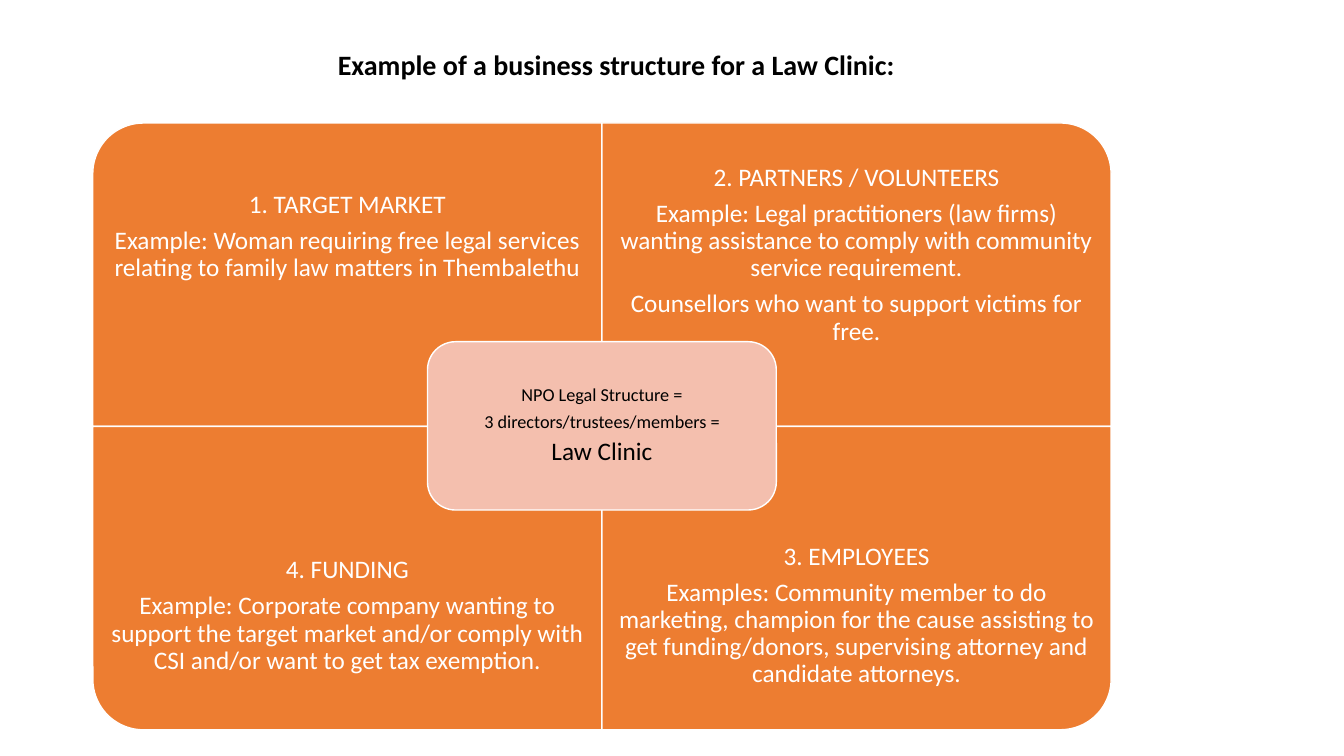
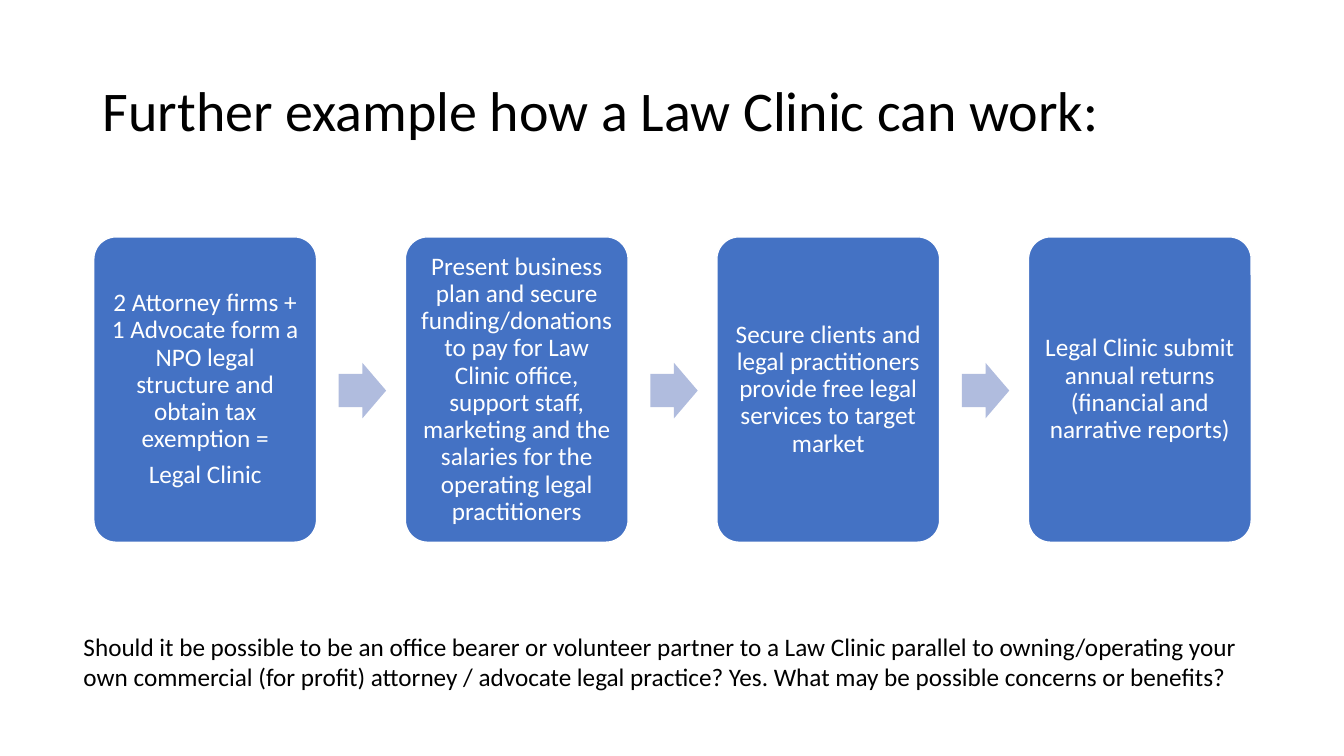
from pptx import Presentation
from pptx import util as u
from pptx.dml.color import RGBColor
from pptx.enum import shapes, text

PX = 9144
FONT = "Calibri"
INK = {"black": "000000", "white": "FFFFFF", "orange": "ED7D31",
       "pink": "F4BFAE", "blue": "4472C4", "pale": "B0BCDE"}
KIND = shapes.MSO_SHAPE
ALIGN = text.PP_ALIGN
ANCHOR = text.MSO_ANCHOR

QUADS = [
    (0, 0, 270, 0, ["1. TARGET MARKET",
                    "Example: Woman requiring free legal services relating to "
                    "family law matters in Thembalethu"]),
    (1, 0, 0, 18, ["2. PARTNERS / VOLUNTEERS",
                   "Example: Legal practitioners (law firms) wanting assistance "
                   "to comply with community service requirement.",
                   "Counsellors who want to support victims for free."]),
    (0, 1, 180, 0, ["4. FUNDING",
                    "Example: Corporate company wanting to support the target "
                    "market and/or comply with CSI and/or want to get tax "
                    "exemption."]),
    (1, 1, 90, 0, ["3. EMPLOYEES",
                   "Examples: Community member to do marketing, champion for "
                   "the cause assisting to get funding/donors, supervising "
                   "attorney and candidate attorneys."]),
]
CORE = ["NPO Legal Structure =", "3 directors/trustees/members =", "Law Clinic"]
STEPS = [
    ["2 Attorney firms + 1 Advocate form a NPO legal structure and obtain tax "
     "exemption =", "Legal Clinic"],
    ["Present business plan and secure funding/donations to pay for Law Clinic "
     "office, support staff, marketing and the salaries for the operating "
     "legal practitioners"],
    ["Secure clients and legal practitioners provide free legal services to "
     "target market"],
    ["Legal Clinic submit annual returns (financial and narrative reports)"],
]
NOTE = ("Should it be possible to be an office bearer or volunteer partner to a "
        "Law Clinic parallel to owning/operating your own commercial (for "
        "profit) attorney / advocate legal practice? Yes. What may be possible "
        "concerns or benefits?")


def tint(name):
    return RGBColor.from_string(INK[name])


def place(x, y, w, h):
    return [u.Emu(n * PX) for n in (x, y, w, h)]


def write(shape, lines, sizes=(18,), ink="white", bold=False, align=ALIGN.CENTER,
          anchor=ANCHOR.MIDDLE, lead=0.9, after=0.35, inset=None):
    frame = shape.text_frame
    frame.word_wrap = True
    frame.auto_size = text.MSO_AUTO_SIZE.NONE
    frame.vertical_anchor = anchor
    if inset is not None:
        pad = u.Emu(inset * PX)
        frame.margin_left = frame.margin_right = pad
        frame.margin_top = frame.margin_bottom = pad
    for i, line in enumerate(lines):
        para = frame.paragraphs[0] if i == 0 else frame.add_paragraph()
        size = sizes[min(i, len(sizes) - 1)]
        para.alignment = align
        para.line_spacing = lead
        para.space_before = u.Pt(0)
        para.space_after = u.Pt(round(size * after, 2))
        run = para.add_run()
        run.text = line
        font = run.font
        font.name, font.size, font.bold = FONT, u.Pt(size), bold
        font.color.rgb = tint(ink)


def head(slide, line, box, size, bold=False):
    title = slide.shapes.title
    title.left, title.top, title.width, title.height = place(*box)
    write(title, [line], sizes=(size,), ink="black", bold=bold,
          align=ALIGN.LEFT, after=0)


def label(slide, lines, box, **style):
    write(slide.shapes.add_textbox(*place(*box)), lines, **style)


def block(slide, kind, box, fill, edge=True, turn=0, adjust=()):
    shape = slide.shapes.add_shape(kind, *place(*box))
    shape.shadow.inherit = False
    shape.rotation = turn
    shape.fill.solid()
    shape.fill.fore_color.rgb = tint(fill)
    if edge:
        shape.line.color.rgb = tint("white")
        shape.line.width = u.Pt(1)
    else:
        shape.line.fill.background()
    for i, value in enumerate(adjust):
        shape.adjustments[i] = value
    return shape


def quad(slide, col, row, turn, drop, lines):
    wide, high, deep = 505, 301, 226
    x, y = 92 + col * wide, 122 + row * high
    w, h = (high, wide) if turn % 180 else (wide, high)
    box = (x + (wide - w) // 2, y + (high - h) // 2, w, h)
    block(slide, KIND.ROUND_1_RECTANGLE, box, "orange", turn=turn)
    top = y + row * (high - deep) + drop
    label(slide, lines, (x, top, wide, deep), inset=14)


def matrix(slide):
    head(slide, "Example of a business structure for a Law Clinic:",
         (325, 28, 624, 76), 20, bold=True)
    for item in QUADS:
        quad(slide, *item)
    core = block(slide, KIND.ROUNDED_RECTANGLE, (424, 339, 346, 167), "pink")
    write(core, CORE, sizes=(13, 13, 18), ink="black", inset=5)


def process(slide):
    head(slide, "Further example how a Law Clinic can work:",
         (92, 40, 1150, 145), 40)
    pitch = 309
    for i, lines in enumerate(STEPS):
        x = 93 + i * pitch
        card = block(slide, KIND.ROUNDED_RECTANGLE, (x, 235, 221, 303), "blue",
                     adjust=(0.1,))
        write(card, lines, inset=7)
        if i < len(STEPS) - 1:
            block(slide, KIND.RIGHT_ARROW, (x + 243, 360, 47, 55), "pale",
                  edge=False, adjust=(0.6, 0.5))
    label(slide, [NOTE], (73, 621, 1187, 71), ink="black", align=ALIGN.LEFT,
          anchor=ANCHOR.TOP, lead=1.0, after=0)


def main():
    deck = Presentation()
    deck.slide_width, deck.slide_height = place(0, 0, 1333, 750)[2:]
    for draw in (matrix, process):
        draw(deck.slides.add_slide(deck.slide_layouts[5]))
    deck.save("out.pptx")


if __name__ == "__main__":
    main()
